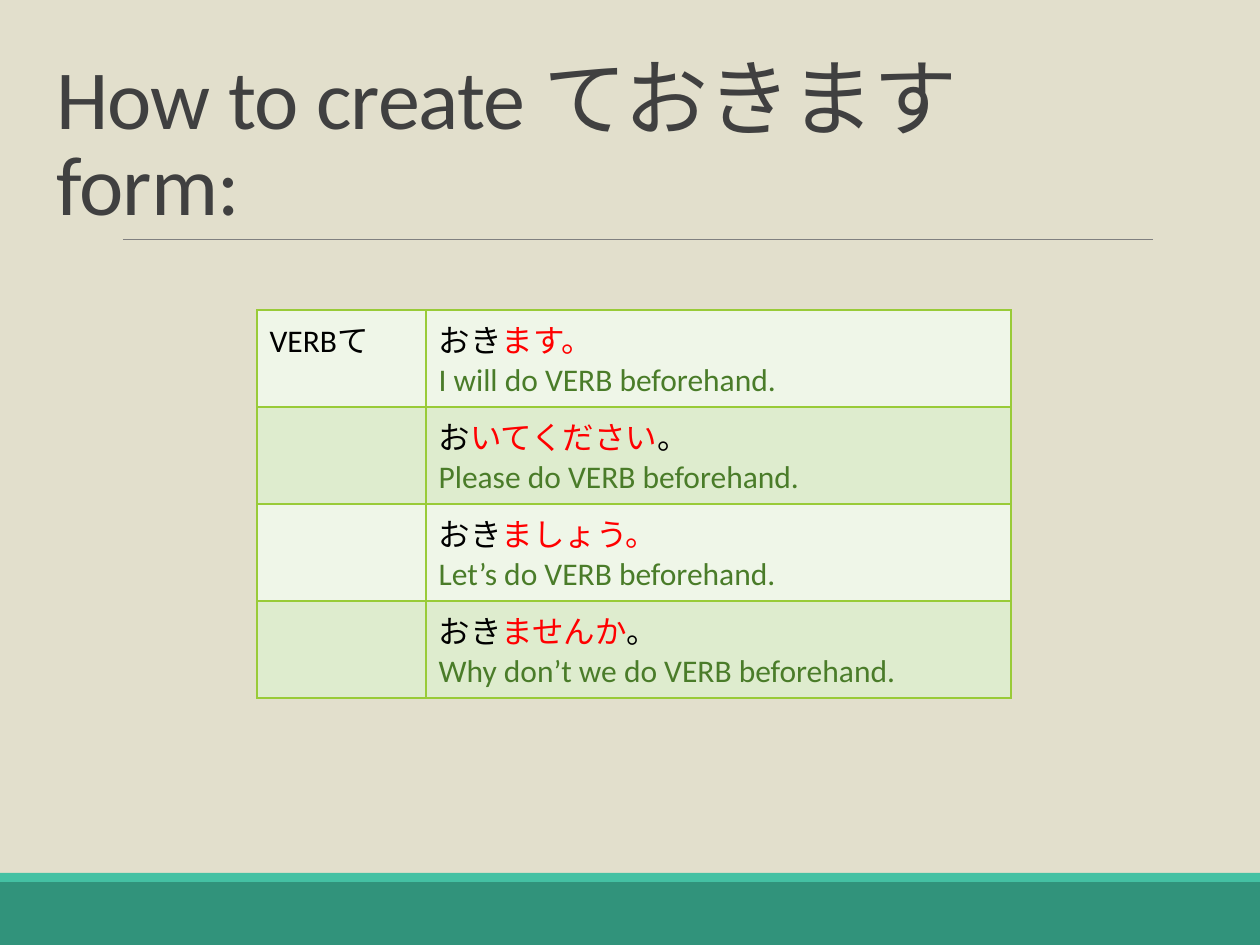
from pptx import Presentation
from pptx.dml.color import RGBColor as RGB
from pptx.enum.shapes import MSO_CONNECTOR as CONN, MSO_SHAPE as SHAPE
from pptx.enum.text import MSO_ANCHOR as ANCHOR
from pptx.oxml.ns import qn
from pptx.util import Pt
from lxml.etree import SubElement

PX = 914400 // 126  # EMU per px
FONT = "Calibri"
BEIGE = RGB(0xE2, 0xDF, 0xCC)
TEAL = RGB(0x31, 0x93, 0x7B)
MINT = RGB(0x44, 0xC1, 0xA3)
GRAY = RGB(0x80, 0x80, 0x80)
DARK = RGB(0x40, 0x40, 0x40)
BLACK = RGB(0, 0, 0)
RED = RGB(0xFF, 0, 0)
GREEN = RGB(0x4A, 0x7C, 0x29)
BANDS = RGB(0xEF, 0xF6, 0xE8), RGB(0xDE, 0xEC, 0xCE)
BORDER = "99CB38"

# Content
TITLE = "How to create ておきます form:"
STEM = "VERBて"
FORMS = [  # Japanese runs, English meaning
    ([("おき", BLACK), ("ます。", RED)], "I will do VERB beforehand."),
    ([("お", BLACK), ("いてください", RED), ("。", BLACK)], "Please do VERB beforehand."),
    ([("おき", BLACK), ("ましょう。", RED)], "Let’s do VERB beforehand."),
    ([("おき", BLACK), ("ませんか", RED), ("。", BLACK)], "Why don’t we do VERB beforehand."),
]
BARS = [(882, 63, TEAL), (873, 9, MINT)]  # top, height, colour
COLS = [169, 585]
ROW_H = 97


def px(*values):
    return [v * PX for v in values]


def add_run(p, text, size, color):
    r = p.add_run()
    r.text = text
    r.font.name, r.font.size, r.font.color.rgb = FONT, Pt(size), color
    return r


def fill_cell(cell, paragraphs, color):
    cell.fill.solid()
    cell.fill.fore_color.rgb = color
    tf = cell.text_frame
    for i, runs in enumerate(paragraphs):
        p = tf.add_paragraph() if i else tf.paragraphs[0]
        for text, run_color in runs:
            add_run(p, text, 18, run_color)
    tcPr = cell._tc.get_or_add_tcPr()
    for i, side in enumerate(("lnL", "lnR", "lnT", "lnB")):
        ln = tcPr.makeelement(qn(f"a:{side}"), {"w": str(Pt(1))})
        SubElement(SubElement(ln, qn("a:solidFill")), qn("a:srgbClr"), val=BORDER)
        tcPr.insert(i, ln)


prs = Presentation()
prs.slide_width, prs.slide_height = px(1260, 945)
s = prs.slides.add_slide(prs.slide_layouts[6])
s.background.fill.solid()
s.background.fill.fore_color.rgb = BEIGE

# Footer bars
for top, height, color in BARS:
    sp = s.shapes.add_shape(SHAPE.RECTANGLE, *px(0, top, 1260, height))
    sp.shadow.inherit = False
    sp.fill.solid()
    sp.fill.fore_color.rgb = color
    sp.line.fill.background()

# Rule under the title
rule = s.shapes.add_connector(CONN.STRAIGHT, *px(123, 239, 1153, 239))
rule.line.color.rgb = GRAY
rule.line.width = Pt(0.5)
SubElement(rule._element.spPr, qn("a:effectLst"))

# Title
tf = s.shapes.add_textbox(*px(44, 39, 1155, 200)).text_frame
tf.word_wrap = True
tf.vertical_anchor = ANCHOR.BOTTOM
tf.margin_right = 60 * PX
p = tf.paragraphs[0]
p.line_spacing = 0.85
r = add_run(p, TITLE, 48, DARK)
r.font._element.set("spc", "-50")

# Table of forms
frame = s.shapes.add_table(len(FORMS), len(COLS),
                           *px(257, 310, sum(COLS), ROW_H * len(FORMS)))
table = frame.table
table.first_row = False
for col, width in zip(table.columns, COLS):
    col.width = width * PX
for i, (japanese, english) in enumerate(FORMS):
    table.rows[i].height = ROW_H * PX
    band = BANDS[i % 2]
    fill_cell(table.cell(i, 0), [] if i else [[(STEM, BLACK)]], band)
    fill_cell(table.cell(i, 1), [japanese, [(english, GREEN)]], band)

prs.save("out.pptx")
